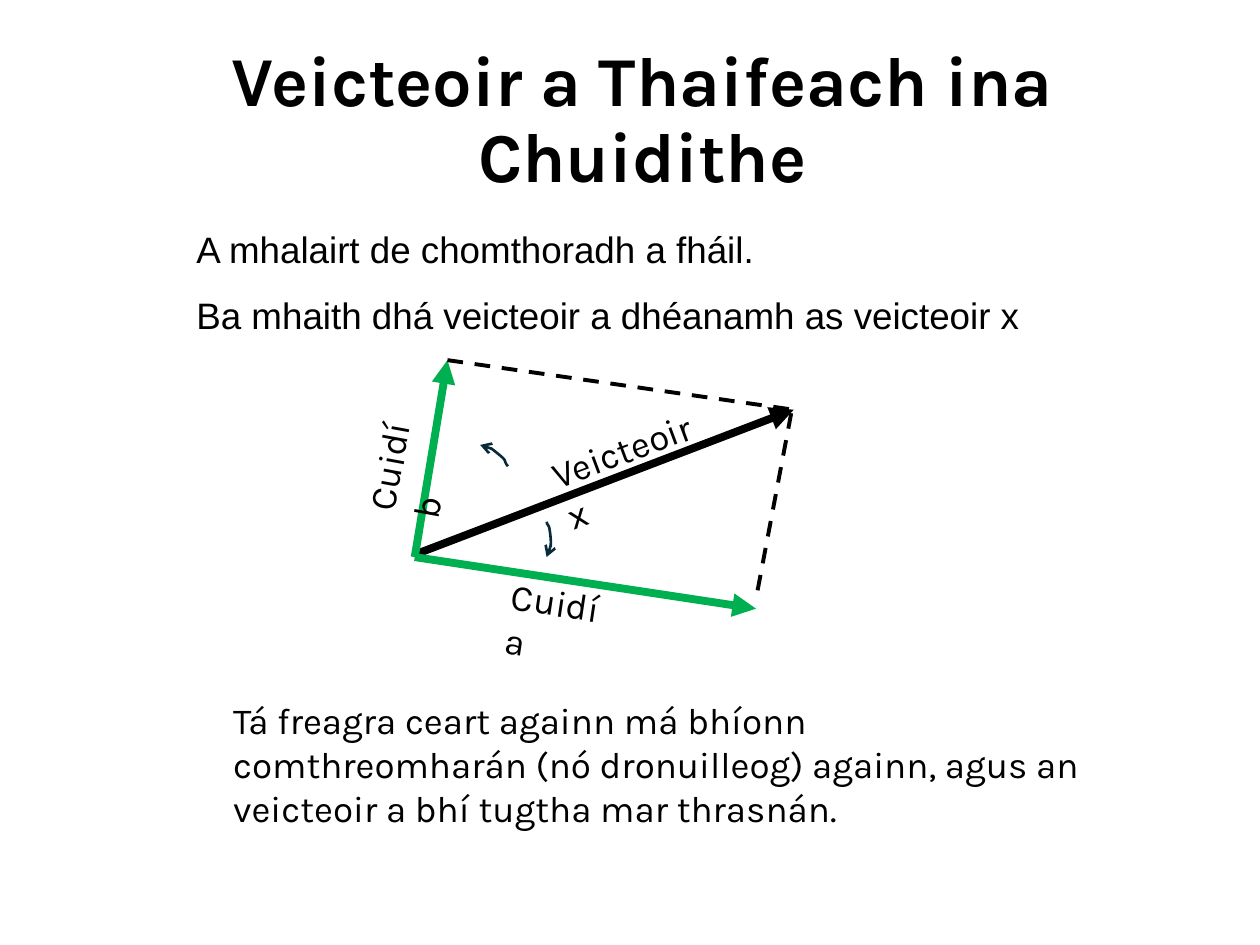
from lxml import etree
from pptx import Presentation
from pptx.dml.color import RGBColor
from pptx.enum import dml, shapes, text
from pptx.oxml import ns
from pptx.util import Cm, Pt

BLACK = RGBColor(0x00, 0x00, 0x00)
GREEN = RGBColor(0x00, 0xB0, 0x50)
NAVY = RGBColor(0x09, 0x2A, 0x39)

HEADING = "Veicteoir a Thaifeach ina Chuidithe"
STATEMENTS = [
    ("A mhalairt de chomthoradh a fháil.", "Arial", (3.71, 4.45, 16.94, 1.14)),
    ("Ba mhaith dhá veicteoir a dhéanamh as veicteoir x", "Arial",
     (3.71, 5.77, 19.79, 1.14)),
    ("Tá freagra ceart againn má bhíonn comthreomharán (nó dronuilleog) "
     "againn, agus an veicteoir a bhí tugtha mar thrasnán.", "Karla",
     (4.45, 13.94, 17.65, 2.95)),
]
LABELS = [
    ("Veicteoir x", (10.8, 8.43, 3.84, 1.14), 339.6),
    ("Cuidí a", (10.06, 11.58, 2.57, 1.14), 8.5),
    ("Cuidí b", (6.55, 8.66, 2.62, 1.14), 280.3),
]
ORIGIN, TIP_A, TIP_B, TIP_X = (8.36, 11.23), (15.24, 12.27), (9.02, 7.26), (16, 8.26)
VECTORS = [((8.36, 11.18), TIP_X, BLACK), (ORIGIN, TIP_A, GREEN), (ORIGIN, TIP_B, GREEN)]
DASHED_SIDES = [(TIP_B, TIP_X), ((15.95, 8.33), (15.24, 12.07))]
TURNS = [
    [(10.24, 9.4), (10.13, 9.27), (10.26, 9.32), (10.03, 9.14),
     (9.8, 8.94), (9.75, 8.99), (9.68, 8.97)],
    [(11.02, 10.52), (11.05, 10.64), (11.07, 10.52), (11.1, 10.82),
     (11.13, 11.13), (11.05, 11.13), (11.02, 11.23)],
]
CURVE_STEPS = 8


def write(frame, words, font, size, bold=False):
    frame.word_wrap = True
    frame.auto_size = text.MSO_AUTO_SIZE.NONE
    run = frame.paragraphs[0].add_run()
    run.text = words
    run.font.name = font
    run.font.size = Pt(size)
    run.font.bold = bold
    run.font.color.rgb = BLACK


def add_words(slide, words, font, box, angle=0):
    caption = slide.shapes.add_textbox(*map(Cm, box))
    caption.rotation = angle
    write(caption.text_frame, words, font, 21)


def style_line(line, colour, width):
    line.color.rgb = colour
    line.width = Pt(width)


def add_head(stroke, kind):
    outline = stroke.line._get_or_add_ln()
    etree.SubElement(outline, ns.qn("a:tailEnd"), type=kind)


def add_side(slide, start, end, colour, width):
    side = slide.shapes.add_connector(
        shapes.MSO_CONNECTOR.STRAIGHT, *map(Cm, start + end))
    style_line(side.line, colour, width)
    etree.SubElement(side._element.spPr, ns.qn("a:effectLst"))
    return side


def bezier(p, t):
    weights = ((1 - t) ** 3, 3 * t * (1 - t) ** 2, 3 * t * t * (1 - t), t ** 3)
    return tuple(Cm(sum(w * point[axis] for w, point in zip(weights, p)))
                 for axis in (0, 1))


def add_turn(slide, controls):
    points = [bezier(controls[i:i + 4], step / CURVE_STEPS)
              for i in range(0, len(controls) - 1, 3)
              for step in range(1, CURVE_STEPS + 1)]
    builder = slide.shapes.build_freeform(*map(Cm, controls[0]))
    builder.add_line_segments(points, close=False)
    turn = builder.convert_to_shape()
    turn.fill.background()
    turn.shadow.inherit = False
    style_line(turn.line, NAVY, 1.5)
    add_head(turn, "arrow")


def main():
    deck = Presentation()
    deck.slide_width, deck.slide_height = Cm(25.4), Cm(19.05)
    slide = deck.slides.add_slide(deck.slide_layouts[5])

    title = slide.shapes.title
    title.left, title.top, title.width, title.height = map(Cm, (1.24, 1.32, 23.42, 2.26))
    write(title.text_frame, HEADING, "Karla", 40, bold=True)
    title.text_frame.vertical_anchor = text.MSO_ANCHOR.MIDDLE
    title.text_frame.paragraphs[0].alignment = text.PP_ALIGN.CENTER
    title.text_frame.paragraphs[0].line_spacing = 0.9

    for start, end, colour in VECTORS:
        add_head(add_side(slide, start, end, colour, 4.5), "triangle")
    for start, end in DASHED_SIDES:
        side = add_side(slide, start, end, BLACK, 2.25)
        side.line.dash_style = dml.MSO_LINE.DASH
    for controls in TURNS:
        add_turn(slide, controls)
    for words, font, box in STATEMENTS:
        add_words(slide, words, font, box)
    for words, box, angle in LABELS:
        add_words(slide, words, "Karla", box, angle)

    deck.save("out.pptx")


if __name__ == "__main__":
    main()
